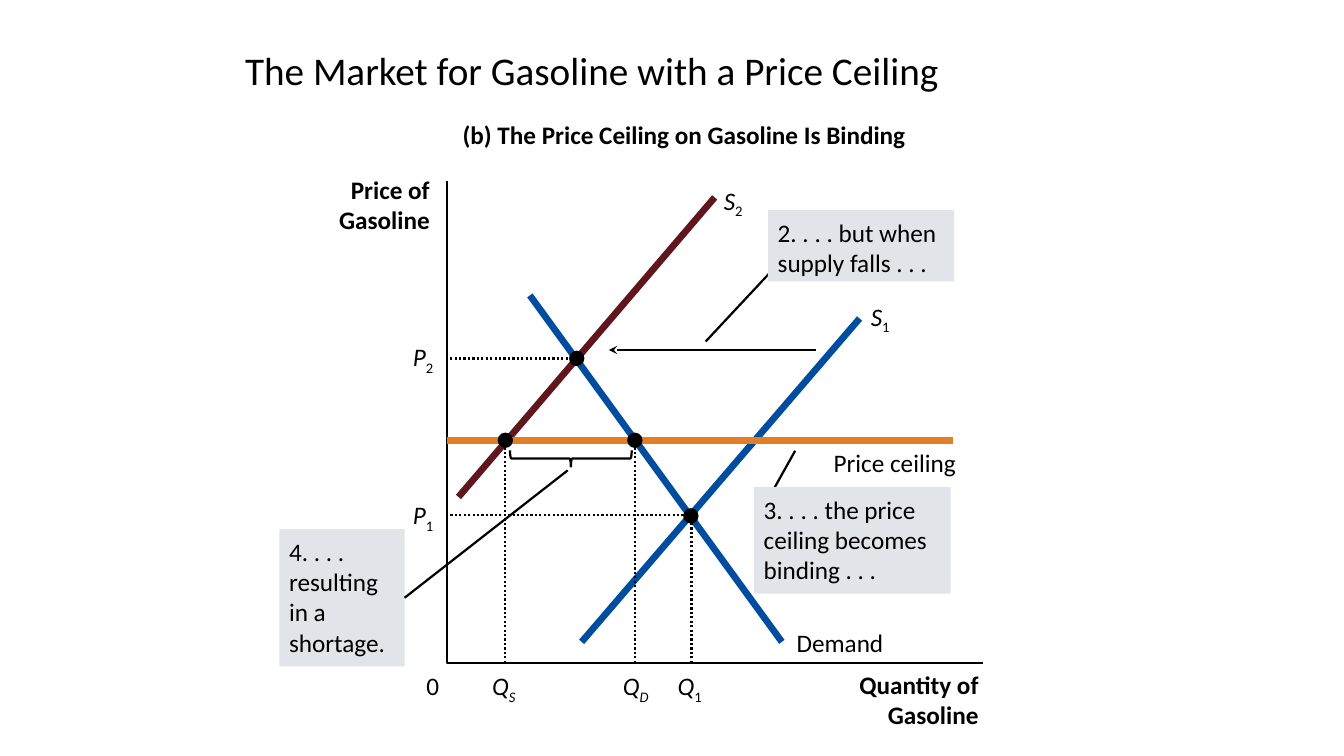
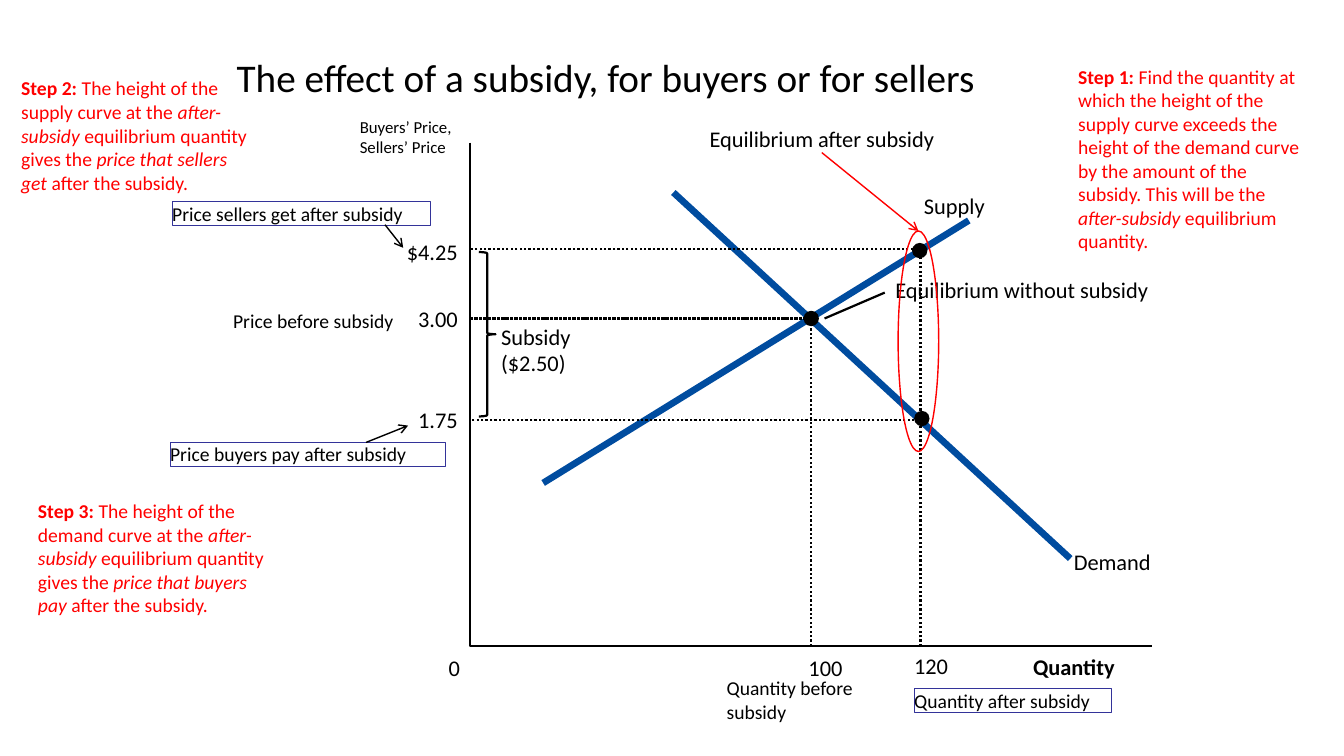
from dataclasses import dataclass

from lxml.etree import SubElement
from pptx import Presentation
from pptx.dml.color import RGBColor as Rgb
from pptx.enum.dml import MSO_LINE as Dash
from pptx.enum.shapes import MSO_CONNECTOR as Wire, MSO_SHAPE as Kind
from pptx.enum.text import MSO_ANCHOR as Anchor, PP_ALIGN as Align
from pptx.oxml.ns import qn
from pptx.util import Pt


@dataclass(frozen=True)
class Theme:
    font: str = "Calibri"
    black: str = "000000"
    blue: str = "004C9F"
    maroon: str = "5F161D"
    orange: str = "E17E26"
    gray: str = "E1E5E9"
    indigo: str = "333399"
    red: str = "FF0000"
    title: float = 28
    large: float = 18
    medium: float = 16
    small: float = 14
    tiny: float = 12
    fine: float = 1
    thin: float = 1.6
    thick: float = 4.8
    dot: float = 11


LOOK = Theme()


def write(shape, text, size, color=LOOK.black, style="", align=Align.LEFT, inset=(0, 0)):
    """Fill with a string, or (text, style) pairs; b bold, i italic, s subscript."""
    frame = shape.text_frame
    frame.word_wrap = True
    frame.vertical_anchor = Anchor.TOP
    frame.margin_left = frame.margin_right = Pt(inset[0])
    frame.margin_top = frame.margin_bottom = Pt(inset[1])
    if isinstance(text, str):
        frame.text = text
        marked = [(run, style) for para in frame.paragraphs for run in para.runs]
    else:
        marked = []
        for part, marks in text:
            run = frame.paragraphs[0].add_run()
            run.text = part
            marked.append((run, marks))
    for para in frame.paragraphs:
        para.alignment = align
    for run, marks in marked:
        font = run.font
        font.name, font.size = LOOK.font, Pt(size)
        font.bold, font.italic = "b" in marks, "i" in marks
        font.color.rgb = Rgb.from_string(color)
        if "s" in marks:
            run._r.get_or_add_rPr().set("baseline", "-25000")


def label(on, x, y, wide, text, size, **format):
    box = on.add_textbox(Pt(x), Pt(y), Pt(wide), Pt(size * 1.22))
    write(box, text, size, **format)
    return box


def title(on, x, y, text):
    box = on.add_textbox(Pt(x), Pt(y), Pt(636.5), Pt(50.5))
    write(box, text, LOOK.title, inset=(7.2, 3.6))
    box.text_frame.vertical_anchor = Anchor.MIDDLE
    box.text_frame.paragraphs[0].line_spacing = 0.8


def ink(shape, color, width):
    shape.line.color.rgb = Rgb.from_string(color)
    shape.line.width = Pt(width)


def solid(on, kind, x, y, wide, high, fill=None, edge=None, width=LOOK.fine):
    shape = on.add_shape(kind, Pt(x), Pt(y), Pt(wide), Pt(high))
    shape.shadow.inherit = False
    if fill:
        shape.fill.solid()
        shape.fill.fore_color.rgb = Rgb.from_string(fill)
    else:
        shape.fill.background()
    if edge:
        ink(shape, edge, width)
    else:
        shape.line.fill.background()
    return shape


def dot(on, x, y):
    half = LOOK.dot / 2
    solid(on, Kind.OVAL, x - half, y - half, LOOK.dot, LOOK.dot, LOOK.black)


def line(on, start, end, color=LOOK.black, width=LOOK.thin, tip=None, dash=None):
    ends = [Pt(value) for value in (*start, *end)]
    link = on.add_connector(Wire.STRAIGHT, *ends)
    ink(link, color, width)
    if dash:
        link.line.dash_style = dash
    props = link.element.spPr
    if tip:
        SubElement(props.find(qn("a:ln")), qn("a:tailEnd"), type=tip)
    SubElement(props, qn("a:effectLst"))
    return link


def guide(on, start, end):
    line(on, start, end, dash=Dash.ROUND_DOT)


def bend(on, start, corner, end, dash=None):
    """Draw an open outline with one corner."""
    pen = on.build_freeform(Pt(start[0]), Pt(start[1]))
    pen.add_line_segments([(Pt(x), Pt(y)) for x, y in (corner, end)], close=False)
    shape = pen.convert_to_shape()
    shape.shadow.inherit = False
    shape.fill.background()
    ink(shape, LOOK.black, LOOK.thin)
    if dash:
        shape.line.dash_style = dash


def curve(on, start, end, color, spot, text, size):
    """Draw a thick line and name it at spot."""
    line(on, start, end, color, LOOK.thick)
    label(on, *spot, 110, text, size)


def note(on, x, y, wide, high, text):
    box = solid(on, Kind.RECTANGLE, x, y, wide, high, LOOK.gray)
    write(box, text, LOOK.large, inset=(7, 5))
    return box


def frame(on, x, y, wide, text):
    box = solid(on, Kind.RECTANGLE, x, y, wide, 17, edge=LOOK.indigo, width=0.75)
    write(box, text, LOOK.small)


def step(on, x, y, number, *parts):
    runs = [(f"Step {number}:", "b"), *parts]
    label(on, x, y, 181.5, runs, LOOK.small, color=LOOK.red, inset=(7.2, 3.6))


def ceiling(on):
    left, base, cap = 319.5, 473.5, 314.5
    size = LOOK.large
    title(on, 168, 27.5, "The Market for Gasoline with a Price Ceiling")
    bend(on, (left, 129.5), (left, base), (702, base))
    line(on, (583, 250), (435, 250), tip="stealth")
    label(on, 330.5, 85.5, 330, "(b) The Price Ceiling on Gasoline Is Binding", size, style="b")
    for x, y, text in ((207, 124.5, "Price of\nGasoline"), (599, 478, "Quantity of\nGasoline")):
        label(on, x, y, 100, text, size, style="b", align=Align.RIGHT)
    label(on, 304.5, 479, 14, "0", size)

    curve(on, (378.5, 211), (558.5, 458.5), LOOK.blue, (569, 448), "Demand", size)
    curve(on, (415.5, 458.5), (614, 227.5), LOOK.blue, (622, 215),
          [("S", "i"), ("1", "s")], size)
    curve(on, (327.5, 355), (510.5, 141), LOOK.maroon, (517, 132.5),
          [("S", "i"), ("2", "s")], size)
    curve(on, (680.5, cap), (left, cap), LOOK.orange, (595.5, 319.5), "Price ceiling", size)

    brace = solid(on, Kind.RIGHT_BRACE, 402, 284, 11.5, 87, edge=LOOK.black, width=LOOK.thin)
    brace.rotation = 90
    short = note(on, 199.5, 378, 89.5, 98, "4. . . . resulting in a shortage.")
    line(on, (405.5, 336), (289, 427)).end_connect(short, 3)
    line(on, (551.5, 351.5), (568, 322))
    note(on, 538.5, 348, 140.5, 76, "3. . . . the price ceiling becomes binding . . .")
    line(on, (553.5, 191), (504, 244))
    note(on, 548.5, 150, 133, 51, "2. . . . but when supply falls . . .")

    for x in (361, 453.5):
        guide(on, (x, base), (x, cap))
        dot(on, x, cap)
    guide(on, (412, 256), (left, 256))
    dot(on, 412, 256)
    bend(on, (494, base), (494, 368), (left, 368), Dash.ROUND_DOT)
    dot(on, 493.5, 368.5)
    for x, y, name, mark, marks in (
        (351.5, 479, "Q", "S", "is"), (445, 479, "Q", "D", "is"), (484, 479, "Q", "1", "s"),
        (295, 244, "P", "2", "s"), (295, 357, "P", "1", "s"),
    ):
        label(on, x, y, 28, [(name, "i"), (mark, marks)], size)


def subsidy(on):
    left, base = 336, 461.5
    size = LOOK.medium
    title(on, 162, 33, "The effect of a subsidy, for buyers or for sellers")
    bend(on, (left, 102), (left, base), (823, base))
    label(on, 738, 466.5, 75, "Quantity", size, style="b")
    label(on, 257, 83.5, 76, "Buyers’ Price,\nSellers’ Price", LOOK.tiny)
    line(on, (589, 227.5), (632, 209))
    label(on, 639.5, 197.5, 195, "Equilibrium without subsidy", size)
    solid(on, Kind.RIGHT_BRACE, 342, 180, 12, 117.5, edge=LOOK.black, width=LOOK.thin)
    label(on, 358, 230.5, 85, "Subsidy ($2.50)", size)

    curve(on, (481, 137.5), (764.5, 399), LOOK.blue, (767, 391.5), "Demand", size)
    curve(on, (692, 157.5), (388, 345), LOOK.blue, (660, 137), "Supply", size)

    for x, y in ((579.5, 227.5), (657.5, 178)):
        bend(on, (x, base), (x, y), (left, y), Dash.ROUND_DOT)
    for y, x in ((227.5, 579.5), (300, 659.5)):
        guide(on, (x, y), (left, y))
    for spot in ((579.5, 227.5), (657, 179), (658.5, 299)):
        dot(on, *spot)
    for y, text in ((170, "$4.25"), (218, "3.00"), (290, "1.75")):
        label(on, 277, y, 50, text, size, align=Align.RIGHT)
    for x, y, text in ((320.5, 467.5, "0"), (577.5, 467.5, "100"), (653, 466, "120")):
        label(on, x, y, 30, text, size)

    frame(on, 123, 144, 184.5, "Price sellers get after subsidy")
    frame(on, 121.5, 316, 196.5, "Price buyers pay after subsidy")
    frame(on, 653, 492, 141, "Quantity after subsidy")
    line(on, (275, 160.5), (288, 177), width=LOOK.fine, tip="arrow")
    line(on, (261.5, 316), (291.5, 304), width=LOOK.fine, tip="arrow")
    label(on, 166.5, 220.5, 132, "Price before subsidy", LOOK.small)
    label(on, 519, 483, 112, "Quantity before subsidy", LOOK.small)

    ring = solid(on, Kind.OVAL, 641.5, 165, 29, 157.5, edge=LOOK.red)
    after = label(on, 501.5, 89.5, 171, "Equilibrium after subsidy", size, align=Align.CENTER)
    link = line(on, (587, 109), (656, 165), LOOK.red, LOOK.fine, "arrow")
    link.begin_connect(after, 2)
    link.end_connect(ring, 0)

    step(on, 763, 42.5, 1,
         (" Find the quantity at which the height of the supply curve exceeds the height of "
          "the demand curve by the amount of the subsidy. This will be the ", ""),
         ("after-subsidy", "i"), (" equilibrium quantity.", ""))
    for x, y, number, side, deed in (
        (8, 51, 2, "supply", "sellers get"), (20, 353, 3, "demand", "buyers pay"),
    ):
        step(on, x, y, number,
             (f" The height of the {side} curve at the ", ""), ("after-subsidy", "i"),
             (" equilibrium quantity gives the ", ""), (f"price that {deed} ", "i"),
             ("after the subsidy.", ""))


def main():
    deck = Presentation()
    deck.slide_width, deck.slide_height = Pt(960), Pt(540)
    for draw in (ceiling, subsidy):
        draw(deck.slides.add_slide(deck.slide_layouts[6]).shapes)
    deck.save("out.pptx")


if __name__ == "__main__":
    main()
